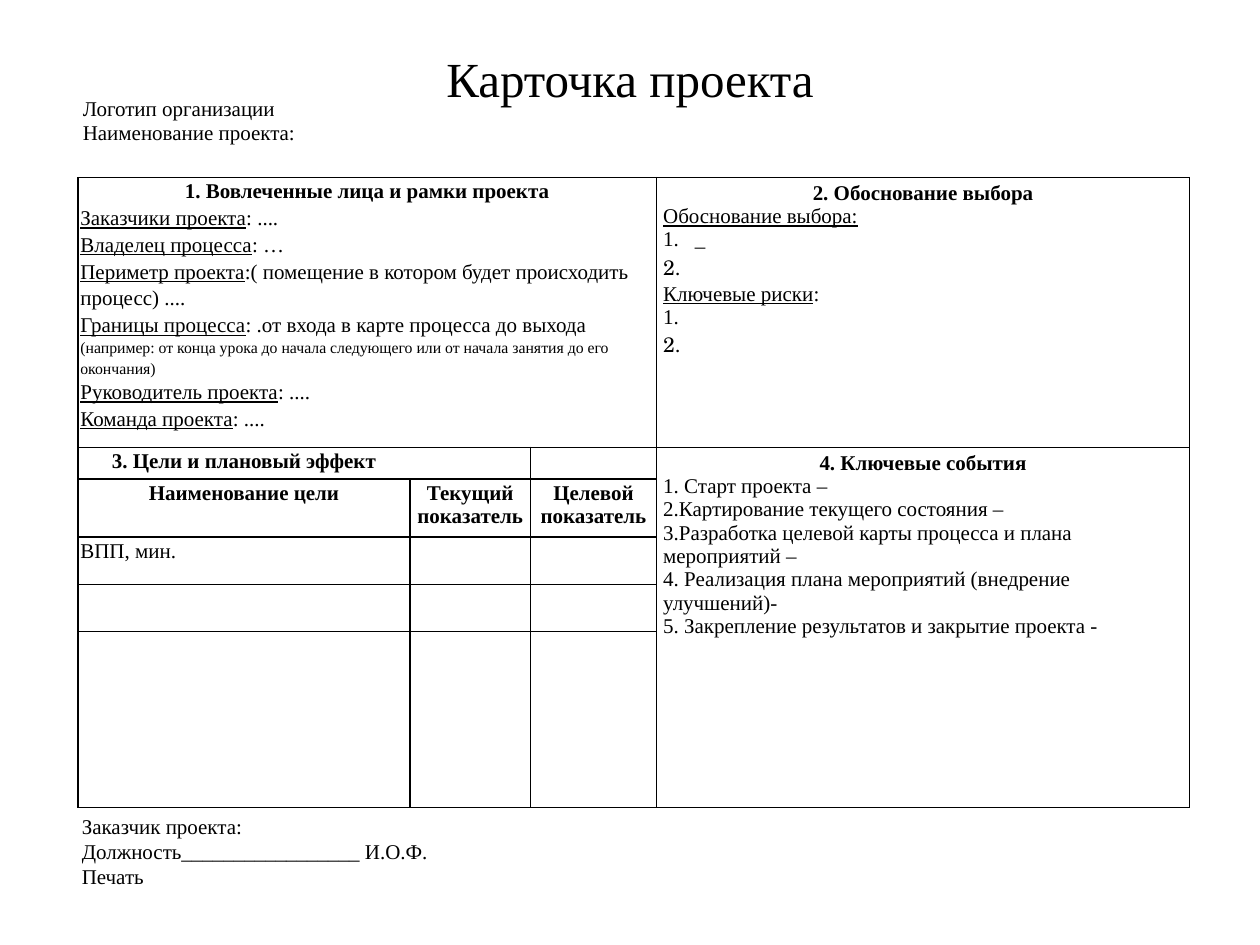
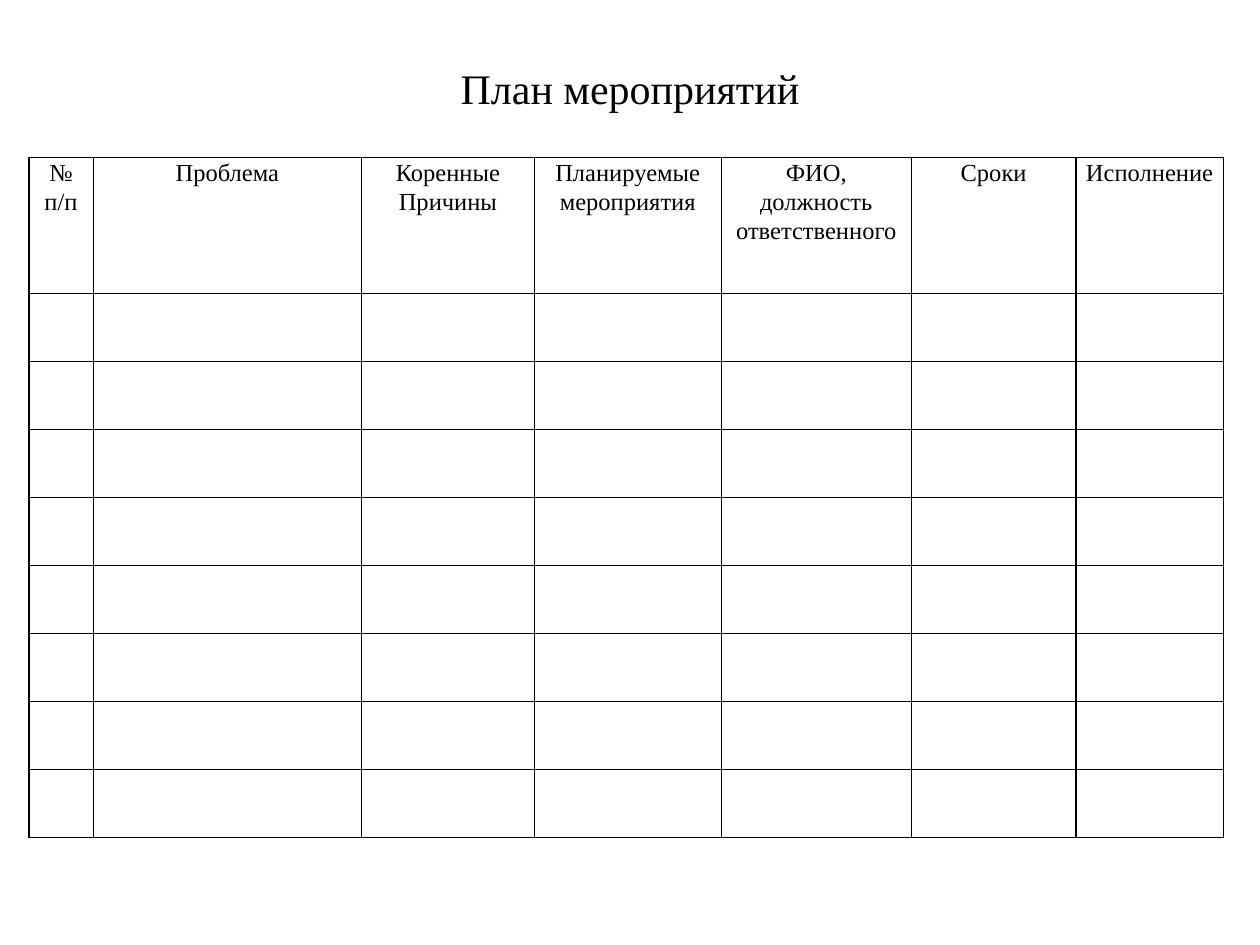
from lxml import etree
from pptx import Presentation
from pptx.dml.color import RGBColor
from pptx.enum import text as t
from pptx.oxml.ns import qn
from pptx.util import Cm, Pt

BLACK = RGBColor(0x00, 0x00, 0x00)
SERIF = "Times New Roman"
SCHOLA = "TeX Gyre Schola"
NO_STYLE = "{2D5ABB26-0587-4C30-8999-92F81FD0307C}"
CENTER = {"alignment": t.PP_ALIGN.CENTER}
UNDERLINE = {"underline": True}
BOLD = {"bold": True}


def write(frame, paragraphs, size):
    """Fill a frame with (paragraph format, [(text, font format), ...]) items."""
    for i, (layout, runs) in enumerate(paragraphs):
        paragraph = frame.paragraphs[0] if i == 0 else frame.add_paragraph()
        for key, value in layout.items():
            setattr(paragraph, key, value)
        for words, look in runs:
            run = paragraph.add_run()
            run.text = words
            run.font.color.rgb = BLACK
            for key, value in ({"name": SERIF, "size": Pt(size)} | look).items():
                setattr(run.font, key, value)


def add_grid(slide, left, top, columns, rows, margins, open_edges=None):
    """Add a plain table; open_edges maps (row, column) to edges without a line."""
    grid = slide.shapes.add_table(len(rows), len(columns), Cm(left), Cm(top),
                                  Cm(sum(columns)), Cm(sum(rows))).table
    grid.first_row = grid.horz_banding = False
    grid._tbl.tblPr.find(qn("a:tableStyleId")).text = NO_STYLE
    for column, width in zip(grid.columns, columns):
        column.width = Cm(width)
    for r, height in enumerate(rows):
        grid.rows[r].height = Cm(height)
        for c in range(len(columns)):
            cell = grid.cell(r, c)
            cell.margin_left = cell.margin_right = Cm(margins[0])
            cell.margin_top = cell.margin_bottom = Cm(margins[1])
            etree.SubElement(cell.text_frame.paragraphs[0]._p,
                             qn("a:endParaRPr"), sz="1200")
            for edge in "LRTB":
                if edge in (open_edges or {}).get((r, c), ""):
                    continue
                line = etree.SubElement(cell._tc.tcPr, qn(f"a:ln{edge}"), w="12700")
                paint = etree.SubElement(line, qn("a:solidFill"))
                etree.SubElement(paint, qn("a:srgbClr"), val=str(BLACK))
            cell.fill.background()
    return grid


prs = Presentation()
prs.slide_width, prs.slide_height = Cm(25.4), Cm(19.05)

# Titles of both slides
slides = []
for heading, size, height in [("Карточка проекта", 28, 1.63),
                              ("План мероприятий", 24, 2.01)]:
    slide = prs.slides.add_slide(prs.slide_layouts[5])
    title = slide.shapes.title
    title.left, title.top = Cm(1.27), Cm(0.76)
    title.width, title.height = Cm(22.86), Cm(height)
    title.text_frame.auto_size = t.MSO_AUTO_SIZE.NONE
    title.text_frame.vertical_anchor = t.MSO_ANCHOR.MIDDLE
    write(title.text_frame, [(CENTER, [(heading, {})])], size)
    slides.append(slide)
card, plan = slides

# Project card: organisation and project name
organisation = add_grid(card, 1.57, 1.4, [16.3, 5.97], [2.59], (0.1, 0.1),
                        {(0, 0): "LRTB", (0, 1): "LRTB"}).cell(0, 0)
organisation.margin_top = Cm(0.58)
write(organisation.text_frame,
      [({}, [(line, {})]) for line in ("Логотип организации", "Наименование проекта:")], 12)

# Project card: four sections
sections = add_grid(card, 1.57, 3.58, [6.7, 2.42, 2.55, 10.74],
                    [5.44, 0.64, 1.17, 0.95, 0.95, 3.55], (0.05, 0.05),
                    {(1, 0): "R", (1, 1): "L"})
sections.cell(0, 0).merge(sections.cell(0, 2))
sections.cell(1, 3).merge(sections.cell(5, 3))
for row in (0, 1):
    right_section = sections.cell(row, 3)
    right_section.margin_left = right_section.margin_right = Cm(0.13)
    right_section.margin_top = right_section.margin_bottom = Cm(0.08)

people = [(CENTER, [("1. Вовлеченные лица и рамки проекта", BOLD)])]
for label, value, example in [
    ("Заказчики проекта", ": ....", ""),
    ("Владелец процесса", ": …", ""),
    ("Периметр проекта", ":( помещение в котором будет происходить процесс) ....", ""),
    ("Границы процесса", ": .от входа в карте процесса до выхода ",
     "(например: от конца урока до начала следующего или от начала занятия "
     "до его окончания)"),
    ("Руководитель проекта", ": ....", ""),
    ("Команда проекта", ": ....", ""),
]:
    runs = [(label, UNDERLINE), (value, {})]
    if example:
        runs.append((example, {"size": Pt(9)}))
    people.append(({"line_spacing": 1.15}, runs))
write(sections.cell(0, 0).text_frame, people, 12)

reasons = sections.cell(0, 3).text_frame
write(reasons, [
    (CENTER, [("2. Обоснование выбора", BOLD)]),
    ({}, [("Обоснование выбора:", UNDERLINE)]),
    ({}, [("_", {})]),
    ({}, [("2.", {"name": SCHOLA})]),
    ({}, [("Ключевые риски", UNDERLINE), (":", {})]),
    ({}, [("1.", {})]),
    ({}, [("2.", {"name": SCHOLA})]),
], 12)
first_reason = reasons.paragraphs[2]._p.get_or_add_pPr()
first_reason.set("marL", str(Cm(0.64)))
first_reason.set("indent", str(-Cm(0.64)))
etree.SubElement(first_reason, qn("a:buFont"), typeface=SERIF)
etree.SubElement(first_reason, qn("a:buAutoNum"), type="arabicPeriod")

events = [
    "1. Старт проекта –",
    "2.Картирование текущего состояния –",
    "3.Разработка целевой карты процесса и плана мероприятий –",
    "4. Реализация плана мероприятий (внедрение улучшений)-",
    "5. Закрепление результатов и закрытие проекта -",
]
write(sections.cell(1, 3).text_frame,
      [(CENTER, [("4. Ключевые события", BOLD)])]
      + [({}, [(event, {})]) for event in events], 12)

for row, column, heading in [(1, 0, "3. Цели и плановый эффект"),
                             (2, 0, "Наименование цели"),
                             (2, 1, "Текущий показатель"),
                             (2, 2, "Целевой показатель")]:
    write(sections.cell(row, column).text_frame, [(CENTER, [(heading, BOLD)])], 12)
write(sections.cell(3, 0).text_frame, [({}, [("ВПП, мин.", {})])], 12)

# Project card: signature
signature = card.shapes.add_textbox(Cm(1.4), Cm(16.26), Cm(23.01), Cm(1.8)).text_frame
signature.word_wrap = True
signature.vertical_anchor = t.MSO_ANCHOR.MIDDLE
write(signature, [({}, [(line, {})]) for line in (
    "Заказчик проекта:", "Должность_________________ И.О.Ф.", "Печать")], 12)

# Action plan
actions = add_grid(plan, 0.58, 3.18, [1.3, 5.41, 3.48, 3.77, 3.83, 3.32, 2.97],
                   [2.74] + [1.37] * 8, (0.13, 0))
for column, heading in enumerate([
    "№ п/п", "Проблема", "Коренные Причины", "Планируемые мероприятия",
    "ФИО, должность ответственного", "Сроки", "Исполнение",
]):
    write(actions.cell(0, column).text_frame,
          [(CENTER | {"line_spacing": 1.07}, [(heading, {})])], 14)

prs.save("out.pptx")
